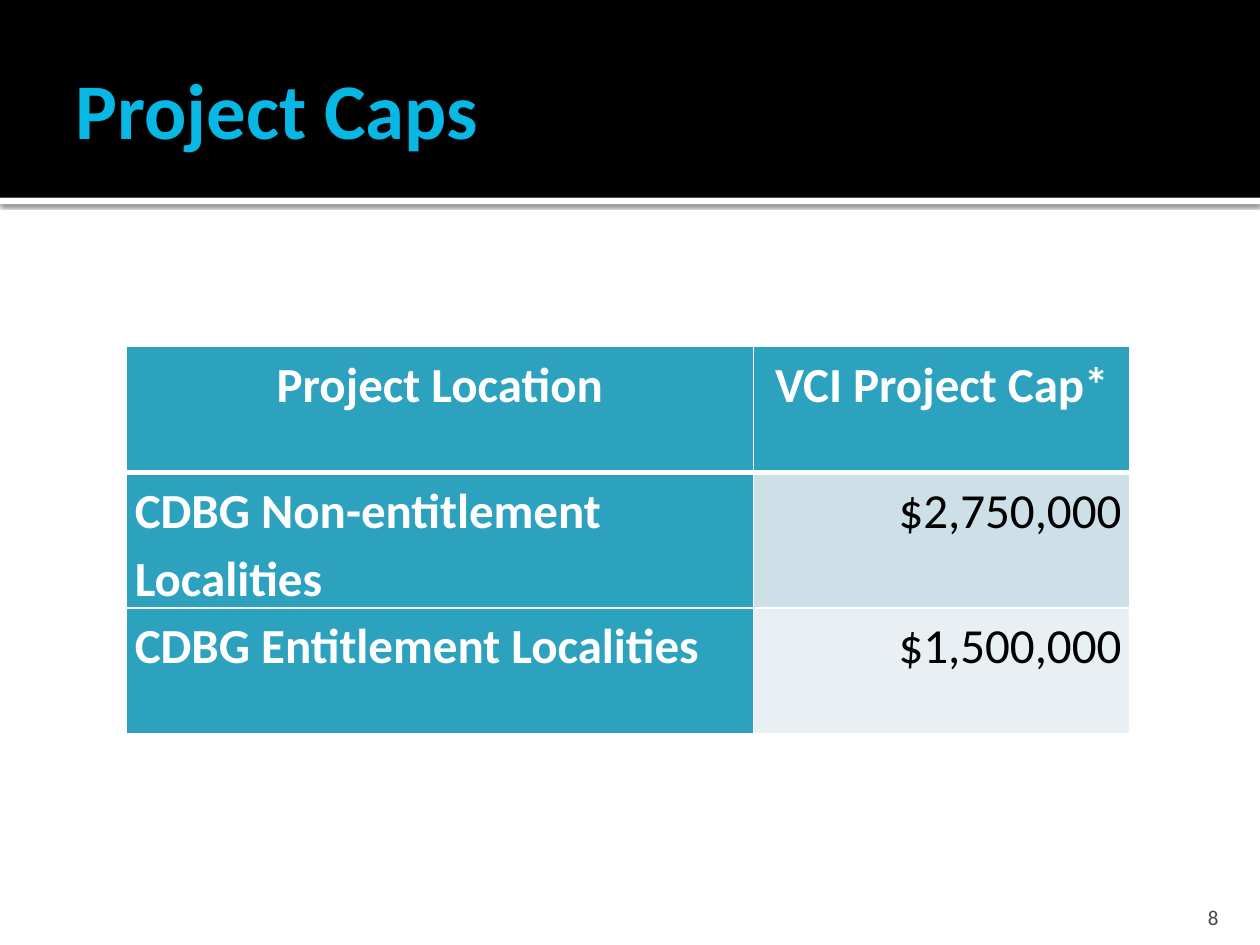
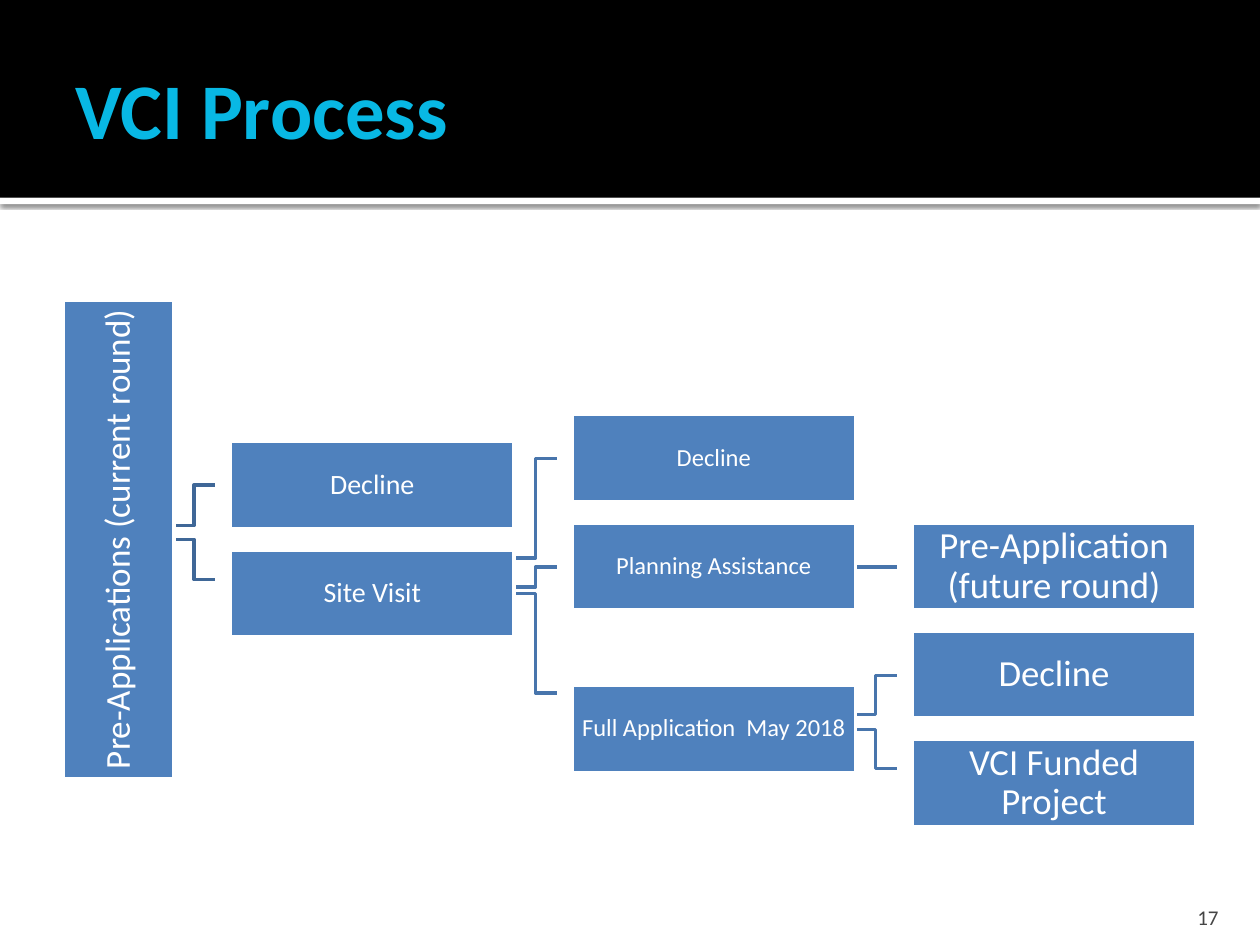
from lxml import etree
from pptx import Presentation
from pptx.dml.color import RGBColor
from pptx.enum.shapes import MSO_SHAPE
from pptx.enum.text import MSO_ANCHOR, PP_ALIGN
from pptx.oxml import parse_xml
from pptx.oxml.ns import qn
from pptx.util import Inches, Pt

RECTANGLE = MSO_SHAPE.RECTANGLE
MIDDLE, BOTTOM = MSO_ANCHOR.MIDDLE, MSO_ANCHOR.BOTTOM
LEFT, CENTER, RIGHT = PP_ALIGN.LEFT, PP_ALIGN.CENTER, PP_ALIGN.RIGHT
DRAWING_NS = "http://schemas.openxmlformats.org/drawingml/2006/main"
FONT = "Calibri"

COLORS = {
    "white": "FFFFFF",
    "black": "000000",
    "title": "08B8E4",
    "number": "454545",
    "teal": "2DA2BF",
    "band_dark": "CDE0E8",
    "band_light": "E8F0F4",
    "node": "4F81BD",
    "root_link": "3F6797",
    "link": "4875AC",
}

CAPS = [
    ("Project Location", "VCI Project Cap*"),
    ("CDBG Non-entitlement Localities", "$2,750,000"),
    ("CDBG Entitlement Localities", "$1,500,000"),
]

COLUMN_LEFTS = (1.33, 4.04, 6.74)
COLUMN_SIZES = (16, 14, 21)
NODES = [
    (0, 0.25, "Decline"),
    (0, 1.25, "Site Visit"),
    (1, 0, "Decline"),
    (1, 1, "Planning Assistance"),
    (1, 2.5, "Full Application  May 2018"),
    (2, 1, "Pre-Application (future round)"),
    (2, 2, "Decline"),
    (2, 3, "VCI Funded Project"),
]
LINKS = [
    (0.88, "root_link", [(1.79, 1.47), (1.9, 2.22)]),
    (3.59, "link", [(2.05, 1.26), (2.28, 2.12), (2.33, 3.12)]),
    (6.29, "link", [(2.12, 2.12), (3.29, 2.98), (3.41, 3.72)]),
]


def rgb(name):
    return RGBColor.from_string(COLORS[name])


def style_text(frame, size, color, align=LEFT, bold=False, spacing=None):
    for para in frame.paragraphs:
        para.alignment = align
        para.line_spacing = spacing
        for span in para.runs:
            span.font.name = FONT
            span.font.size = Pt(size)
            span.font.bold = bold
            span.font.color.rgb = rgb(color)


def set_frame(frame, anchor, insets):
    frame.word_wrap = True
    frame.vertical_anchor = anchor
    (frame.margin_left, frame.margin_top,
     frame.margin_right, frame.margin_bottom) = map(Inches, insets)


def add_text(page, box, text, anchor, insets, **style):
    frame = page.shapes.add_textbox(*map(Inches, box)).text_frame
    set_frame(frame, anchor, insets)
    frame.text = text
    style_text(frame, **style)


def add_rectangle(page, box, fill, outline=None):
    shape = page.shapes.add_shape(RECTANGLE, *map(Inches, box))
    shape.shadow.inherit = False
    shape.fill.solid()
    shape.fill.fore_color.rgb = rgb(fill)
    if outline:
        shape.line.color.rgb = rgb(outline)
        shape.line.width = Pt(2)
    else:
        shape.line.fill.background()
    return shape


def add_shadow(shape):
    effects = shape._element.spPr.find(qn("a:effectLst"))
    shadow = etree.SubElement(effects, qn("a:outerShdw"), blurRad=str(Pt(2.5)),
                              dist=str(Pt(0.8)), dir="5400000", rotWithShape="0")
    color = etree.SubElement(shadow, qn("a:srgbClr"), val=COLORS["black"])
    etree.SubElement(color, qn("a:alpha"), val="60000")


def add_page(deck, title, number):
    page = deck.slides.add_slide(deck.slide_layouts[6])
    add_shadow(add_rectangle(page, (0, 1.57, 10, 0.05), "white"))
    add_rectangle(page, (0, 0, 10, 1.57), "black")
    add_text(page, (0.5, 0.17, 9, 1.37), title, MIDDLE, (0.1, 0.05, 0.05, 0.05),
             size=45, color="title", bold=True)
    add_text(page, (8.97, 7.08, 0.8, 0.3), str(number), BOTTOM, (0.1, 0.05, 0.1, 0),
             size=12, color="number", align=RIGHT)
    return page


def set_borders(cell, top, bottom):
    properties = cell._tc.get_or_add_tcPr()
    widths = {"lnL": 1, "lnR": 1, "lnT": top, "lnB": bottom}
    for index, (side, width) in enumerate(widths.items()):
        properties.insert(index, parse_xml(
            f'<a:{side} xmlns:a="{DRAWING_NS}" w="{Pt(width)}"><a:solidFill>'
            f'<a:srgbClr val="{COLORS["white"]}"/></a:solidFill></a:{side}>'))


def add_caps_table(page, box):
    left, top, width, height = box
    table = page.shapes.add_table(len(CAPS), 2, *map(Inches, box)).table
    table.columns[0].width = Inches(4.98)
    table.columns[1].width = Inches(width - 4.98)
    for row_index, texts in enumerate(CAPS):
        table.rows[row_index].height = Inches(height / len(CAPS))
        for column_index, text in enumerate(texts):
            cell = table.cell(row_index, column_index)
            heading = row_index == 0 or column_index == 0
            fill = "teal" if heading else ("band_dark", "band_light")[row_index - 1]
            align = CENTER if row_index == 0 else (LEFT, RIGHT)[column_index]
            cell.margin_left = cell.margin_right = Inches(0.07)
            cell.margin_top = cell.margin_bottom = 0
            cell.fill.solid()
            cell.fill.fore_color.rgb = rgb(fill)
            set_borders(cell, 3 if row_index == 1 else 1, 3 if row_index == 0 else 1)
            cell.text_frame.text = text
            style_text(cell.text_frame, 28, "white" if heading else "black",
                       align, heading, 1.15)


def add_node(page, box, text, size):
    node = add_rectangle(page, box, "node", "white")
    set_frame(node.text_frame, MIDDLE, (0.01,) * 4)
    node.text_frame.text = text
    style_text(node.text_frame, size, "white", CENTER, spacing=0.9)
    return node


def add_link(page, x, start_y, end_y, color):
    middle, end = x + 0.16, x + 0.33
    points = [(middle, start_y), (middle, end_y), (end, end_y)]
    if start_y == end_y:
        points = points[-1:]
    builder = page.shapes.build_freeform(Inches(x), Inches(start_y))
    builder.add_line_segments([(Inches(px), Inches(py)) for px, py in points], close=False)
    link = builder.convert_to_shape()
    link.shadow.inherit = False
    link.fill.background()
    link.line.color.rgb = rgb(color)
    link.line.width = Pt(2)


def add_process(page, box):
    left, top, width, height = box
    for x, color, spans in LINKS:
        for start_y, end_y in spans:
            add_link(page, left + x, top + start_y, top + end_y, color)
    root_length, root_width = 3.8, 0.88
    shift = (root_length - root_width) / 2
    root = add_node(page, (left - shift, top + shift, root_length, root_width),
                    "Pre-Applications (current round)", 20)
    root.rotation = 270
    for column, slot, text in NODES:
        node_box = (left + COLUMN_LEFTS[column], top + 0.91 + 0.86 * slot, 2.25, 0.69)
        add_node(page, node_box, text, COLUMN_SIZES[column])


def main():
    deck = Presentation()
    deck.slide_width, deck.slide_height = Inches(10), Inches(7.5)
    add_caps_table(add_page(deck, "Project Caps", 8), (1, 2.75, 7.97, 3))
    add_process(add_page(deck, "VCI Process", 17), (0.5, 2.38, 8.99, 4.18))
    deck.save("out.pptx")


if __name__ == "__main__":
    main()
